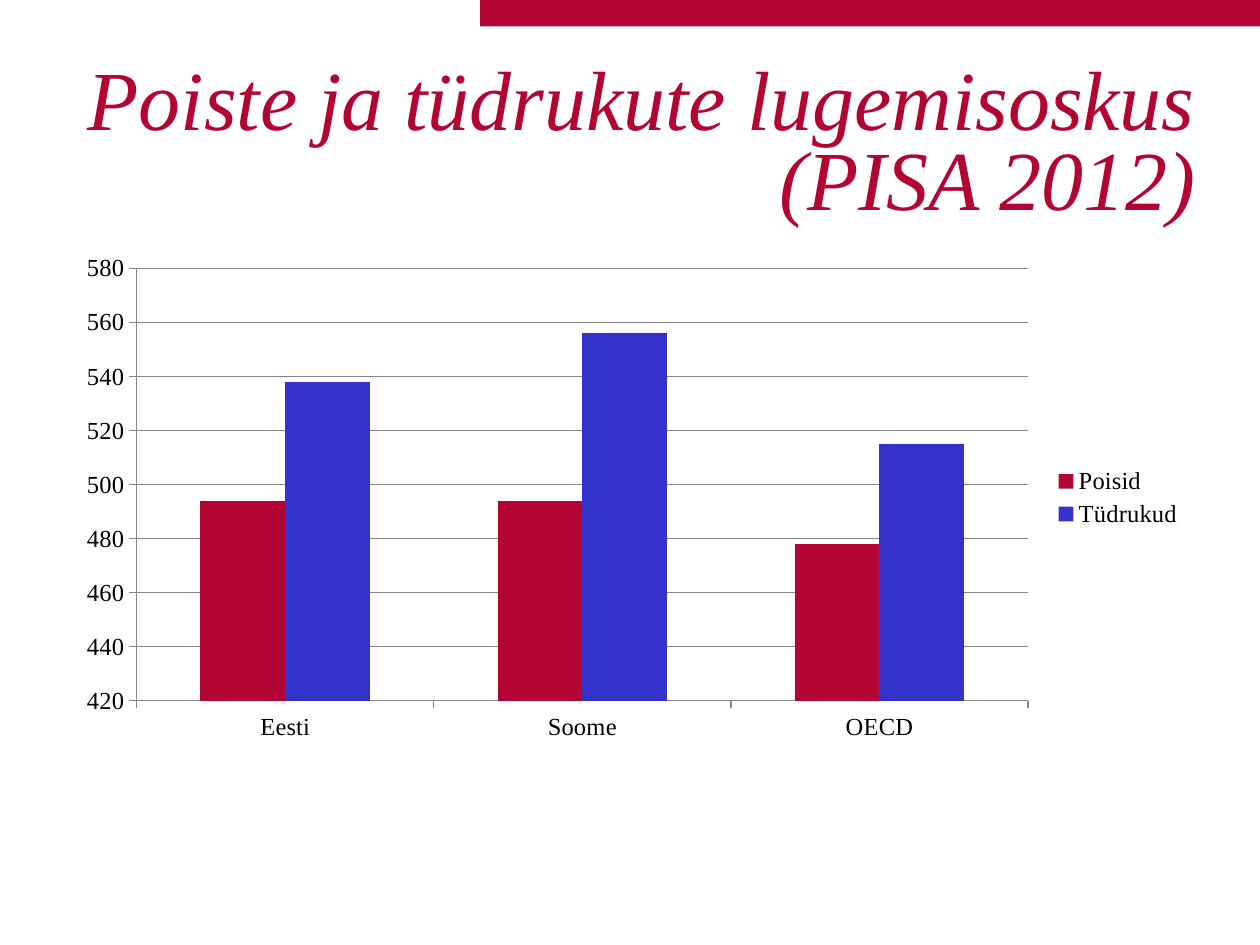
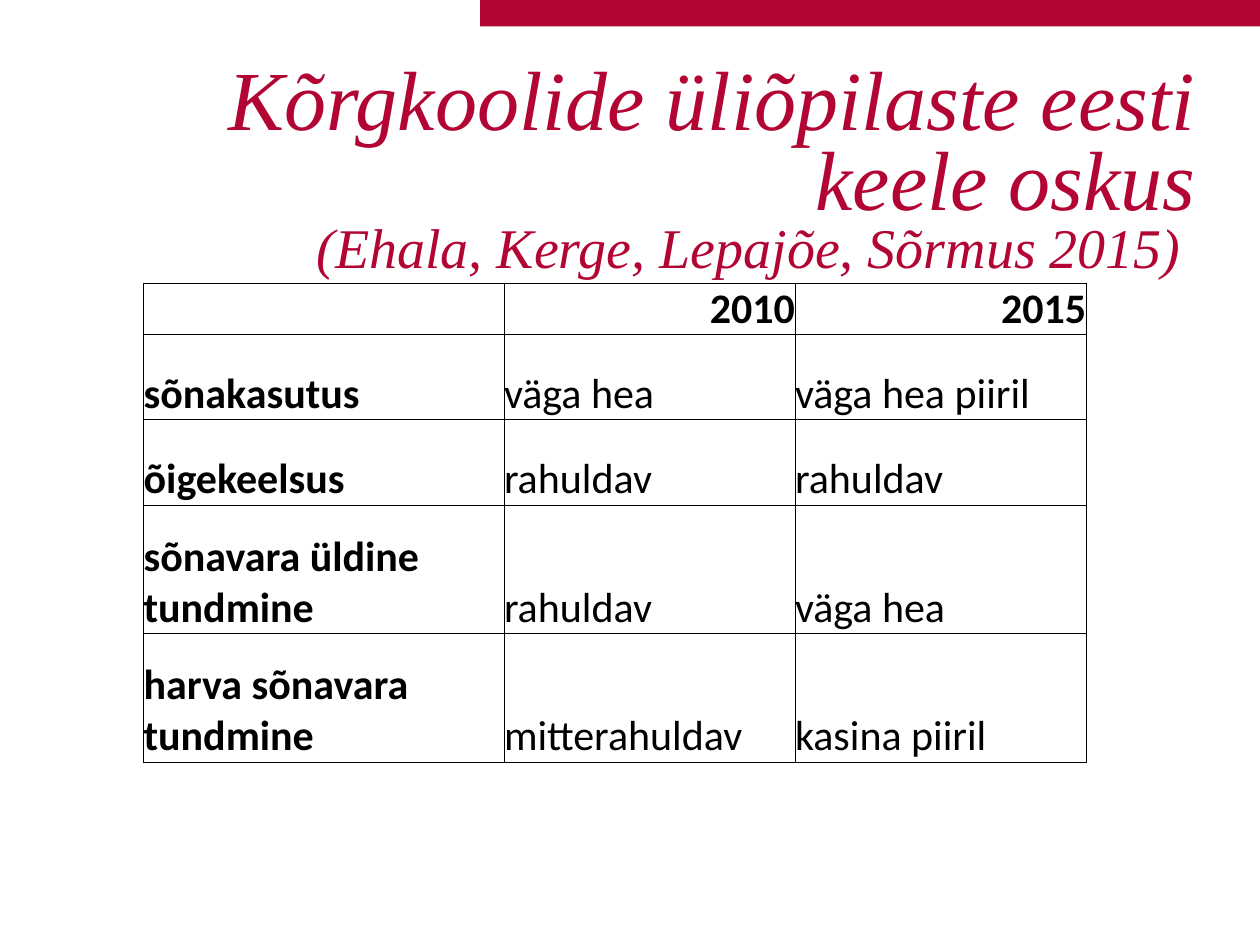
from lxml import etree
from pptx import Presentation
from pptx.chart.data import CategoryChartData
from pptx.dml.color import RGBColor
from pptx.enum import chart as charts, shapes, text
from pptx.oxml import ns
from pptx.util import Inches, Pt

CRIMSON = RGBColor(0xB2, 0x05, 0x33)
BLUE = RGBColor(0x33, 0x33, 0xCC)
BLACK = RGBColor(0, 0, 0)
GRAY = RGBColor(0x87, 0x87, 0x87)
SERIF = "Times New Roman"
SANS = "Calibri"


def add_titled_page(deck, title, title_sizes):
    page = deck.slides.add_slide(deck.slide_layouts[6])
    band = page.shapes.add_shape(
        shapes.MSO_SHAPE.RECTANGLE, Inches(3.81), 0, Inches(6.19), Inches(0.21))
    band.shadow.inherit = False
    band.fill.solid()
    band.fill.fore_color.rgb = CRIMSON
    band.line.fill.background()

    box = page.shapes.add_textbox(Inches(0.5), Inches(0.53), Inches(8.99), Inches(1.24))
    frame = box.text_frame
    frame.word_wrap = True
    frame.margin_left = frame.margin_right = frame.margin_top = frame.margin_bottom = 0
    para = frame.paragraphs[0]
    para.text = title
    para.alignment = text.PP_ALIGN.RIGHT
    para.line_spacing = 0.79
    for span, size in zip(para.runs, title_sizes):
        span.font.name = SERIF
        span.font.size = Pt(size)
        span.font.italic = True
        span.font.color.rgb = CRIMSON
    return page


def add_borders(cell):
    properties = cell._tc.get_or_add_tcPr()
    for position, side in enumerate(("lnL", "lnR", "lnT", "lnB")):
        line = etree.Element(ns.qn(f"a:{side}"), w=str(Pt(0.5)))
        fill = etree.SubElement(line, ns.qn("a:solidFill"))
        etree.SubElement(fill, ns.qn("a:srgbClr"), val=str(BLACK))
        properties.insert(position, line)


deck = Presentation()
deck.slide_width = Inches(10)
deck.slide_height = Inches(7.5)

reading_page = add_titled_page(deck, "Poiste ja tüdrukute lugemisoskus (PISA 2012)", [48])
scores = CategoryChartData()
scores.categories = ["Eesti", "Soome", "OECD"]
scores.add_series("Poisid", [494, 494, 478])
scores.add_series("Tüdrukud", [538, 556, 515])
chart = reading_page.shapes.add_chart(
    charts.XL_CHART_TYPE.COLUMN_CLUSTERED,
    Inches(0.51), Inches(1.94), Inches(8.98), Inches(4.02), scores).chart
chart.has_title = False
chart.font.name = SERIF
chart.font.size = Pt(14)
chart.font.color.rgb = BLACK
chart.has_legend = True
chart.legend.position = charts.XL_LEGEND_POSITION.RIGHT
chart.legend.include_in_layout = False
chart.legend.font.size = Pt(14)

plot = chart.plots[0]
plot.gap_width = 150
plot.vary_by_categories = False
for series, color in zip(plot.series, (CRIMSON, BLUE)):
    series.format.fill.solid()
    series.format.fill.fore_color.rgb = color

for axis in (chart.category_axis, chart.value_axis):
    axis.major_tick_mark = charts.XL_TICK_MARK.OUTSIDE
    axis.minor_tick_mark = charts.XL_TICK_MARK.NONE
    axis.tick_labels.font.size = Pt(14)
    axis.format.line.color.rgb = GRAY
    axis.format.line.width = Pt(0.75)
score_axis = chart.value_axis
score_axis.minimum_scale = 420
score_axis.maximum_scale = 580
score_axis.major_unit = 20
score_axis.has_major_gridlines = True
score_axis.major_gridlines.format.line.color.rgb = GRAY
score_axis.major_gridlines.format.line.width = Pt(0.75)

skills_page = add_titled_page(
    deck,
    "Kõrgkoolide üliõpilaste eesti keele oskus\v(Ehala, Kerge, Lepajõe, Sõrmus 2015) ",
    [48, 32])
skills = [
    ["", "2010", "2015"],
    ["sõnakasutus", "väga hea", "väga hea piiril"],
    ["õigekeelsus", "rahuldav", "rahuldav"],
    ["sõnavara üldine tundmine", "rahuldav", "väga hea"],
    ["harva sõnavara tundmine", "mitterahuldav", "kasina piiril"],
]
table = skills_page.shapes.add_table(
    len(skills), len(skills[0]), Inches(1.14), Inches(2.25), Inches(7.48), Inches(3.79)).table
for column, width in zip(table.columns, (2.86, 2.31, 2.31)):
    column.width = Inches(width)
for row, height in zip(table.rows, (0.39, 0.68, 0.68, 1.02, 1.02)):
    row.height = Inches(height)

for row_index, words in enumerate(skills):
    for column_index, word in enumerate(words):
        cell = table.cell(row_index, column_index)
        cell.fill.background()
        cell.margin_left = cell.margin_right = cell.margin_top = cell.margin_bottom = 0
        cell.vertical_anchor = text.MSO_ANCHOR.BOTTOM
        add_borders(cell)
        para = cell.text_frame.paragraphs[0]
        para.text = word
        if row_index == 0:
            para.alignment = text.PP_ALIGN.RIGHT
        for span in para.runs:
            span.font.name = SANS
            span.font.size = Pt(24)
            span.font.bold = row_index == 0 or column_index == 0
            span.font.color.rgb = BLACK

deck.save("out.pptx")
